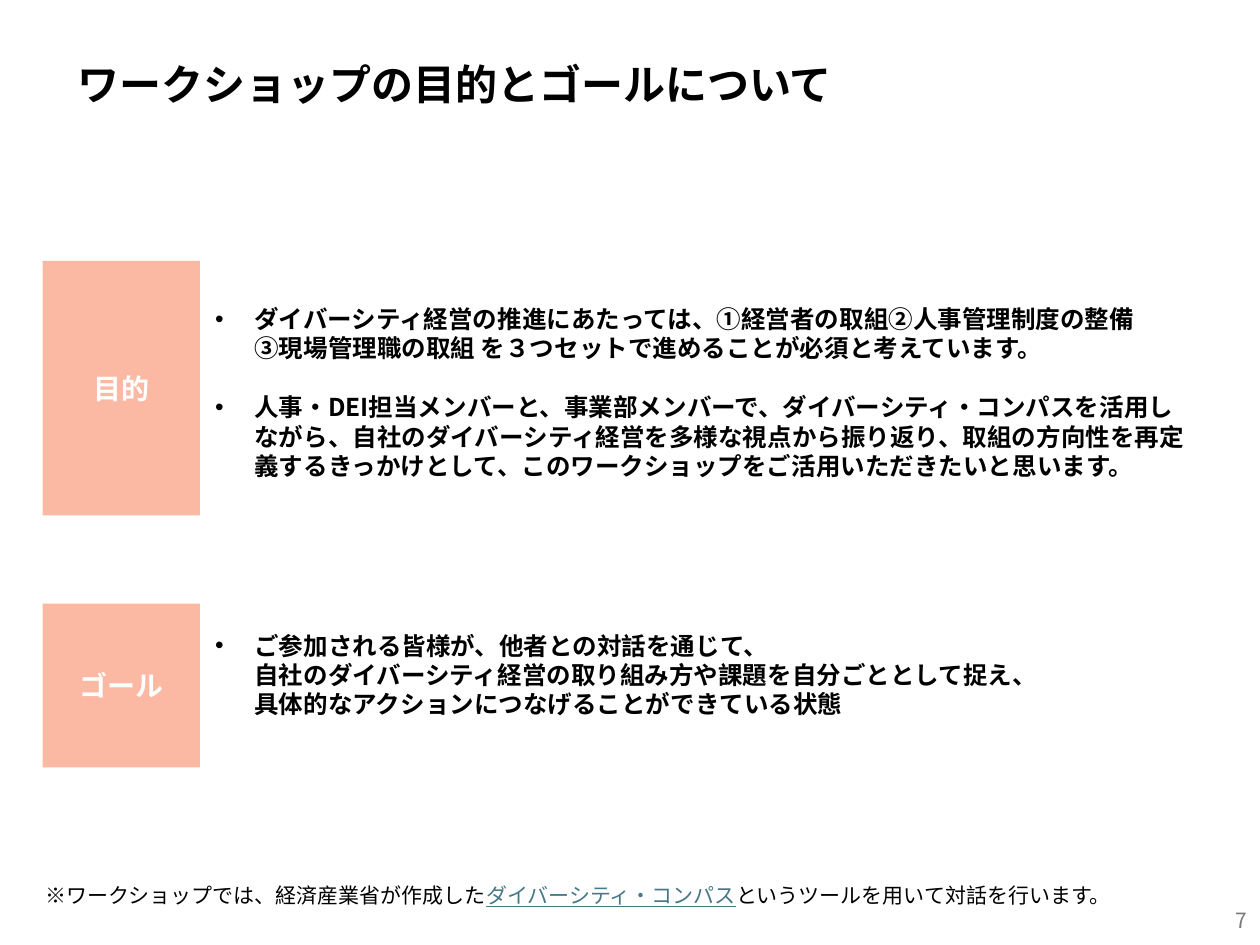
from lxml.etree import SubElement
from pptx import Presentation
from pptx.dml.color import RGBColor
from pptx.enum.shapes import MSO_SHAPE as Shape
from pptx.enum.text import MSO_ANCHOR as Anchor, PP_ALIGN as Align
from pptx.oxml.ns import qn
from pptx.util import Cm, Pt

FONT = "Noto Sans CJK JP"
BLACK = RGBColor(0x00, 0x00, 0x00)
WHITE = RGBColor(0xFF, 0xFF, 0xFF)
SALMON = RGBColor(0xFB, 0xB9, 0xA4)
LINK_TEAL = RGBColor(0x46, 0x78, 0x86)
GRAY = RGBColor(0x79, 0x79, 0x79)

MARGIN = 0.86
LABEL_WIDTH = 3.17
BODY_LEFT = 4.09
BODY_WIDTH = 20.27
HANGING = 0.79
LINE_PITCH = Pt(16.8)

# label, label top and height, body top and height, bullets as lists of lines
SECTIONS = [
    ("目的", 5.26, 5.13, 5.38, 5.05, [
        ["ダイバーシティ経営の推進にあたっては、①経営者の取組②人事管理制度の整備",
         "③現場管理職の取組 を３つセットで進めることが必須と考えています。"],
        ["人事・DEI担当メンバーと、事業部メンバーで、ダイバーシティ・コンパスを活用し"
         "ながら、自社のダイバーシティ経営を多様な視点から振り返り、取組の方向性を再定"
         "義するきっかけとして、このワークショップをご活用いただきたいと思います。"],
    ]),
    ("ゴール", 12.17, 3.3, 12.57, 2.06, [
        ["ご参加される皆様が、他者との対話を通じて、",
         "自社のダイバーシティ経営の取り組み方や課題を自分ごととして捉え、",
         "具体的なアクションにつなげることができている状態"],
    ]),
]


def add_span(para, text, size, color, bold=False, underline=False):
    span = para.add_run()
    span.text = text
    font = span.font
    font.name, font.size = FONT, Pt(size)
    font.bold, font.underline = bold, underline
    font.color.rgb = color
    SubElement(span._r.get_or_add_rPr(), qn("a:ea"), typeface=FONT)


def add_text_frame(page, left, top, width, height, anchor):
    box = page.shapes.add_textbox(Cm(left), Cm(top), Cm(width), Cm(height))
    frame = box.text_frame
    frame.word_wrap = True
    frame.vertical_anchor = anchor
    return frame


def set_bullet(para):
    """Give the paragraph a round bullet with a hanging indent."""
    props = para._p.get_or_add_pPr()
    props.set("marL", str(Cm(HANGING)))
    props.set("indent", str(-Cm(HANGING)))
    SubElement(props, qn("a:buFont"), typeface="Arial")
    SubElement(props, qn("a:buChar"), char="•")


def place_title(page, left, top, width, height):
    title = page.shapes.title
    title.left, title.top = Cm(left), Cm(top)
    title.width, title.height = Cm(width), Cm(height)
    title.text_frame.vertical_anchor = Anchor.MIDDLE
    para = title.text_frame.paragraphs[0]
    para.alignment = Align.LEFT
    para.line_spacing = 0.9
    add_span(para, "ワークショップの目的とゴールについて", 24, BLACK, bold=True)


def add_label(page, text, left, top, width, height):
    label = page.shapes.add_shape(
        Shape.RECTANGLE, Cm(left), Cm(top), Cm(width), Cm(height))
    label.shadow.inherit = False
    label.fill.solid()
    label.fill.fore_color.rgb = SALMON
    label.line.fill.background()
    label.text_frame.vertical_anchor = Anchor.MIDDLE
    para = label.text_frame.paragraphs[0]
    para.alignment = Align.CENTER
    add_span(para, text, 16, WHITE, bold=True)


def add_bullets(page, bullets, left, top, width, height):
    frame = add_text_frame(page, left, top, width, height, Anchor.MIDDLE)
    for index, lines in enumerate(bullets):
        para = frame.add_paragraph() if index else frame.paragraphs[0]
        set_bullet(para)
        para.line_spacing = LINE_PITCH
        if index:
            para.space_before = LINE_PITCH
        for number, line in enumerate(lines):
            if number:
                para.add_line_break()
            add_span(para, line, 14, BLACK, bold=True)


def add_footnote(page, left, top, width, height):
    frame = add_text_frame(page, left, top, width, height, Anchor.TOP)
    para = frame.paragraphs[0]
    para.line_spacing = LINE_PITCH
    add_span(para, "※ワークショップでは、経済産業省が作成した", 12, BLACK)
    add_span(para, "ダイバーシティ・コンパス", 12, LINK_TEAL, underline=True)
    add_span(para, "というツールを用いて対話を行います。", 12, BLACK)


def add_page_number(page, left, top, width, height):
    frame = add_text_frame(page, left, top, width, height, Anchor.MIDDLE)
    para = frame.paragraphs[0]
    para.alignment = Align.RIGHT
    add_span(para, "7", 12, GRAY)


def main():
    deck = Presentation()
    deck.slide_width, deck.slide_height = Cm(25.4), Cm(19.05)
    page = deck.slides.add_slide(deck.slide_layouts.get_by_name("Title Only"))
    place_title(page, 1.3, 0.36, 21.9, 2.77)
    for name, top, height, body_top, body_height, bullets in SECTIONS:
        add_label(page, name, MARGIN, top, LABEL_WIDTH, height)
        add_bullets(page, bullets, BODY_LEFT, body_top, BODY_WIDTH, body_height)
    add_footnote(page, 0.66, 17.58, 24.26, 0.79)
    add_page_number(page, 19.69, 18.03, 5.71, 1.02)
    deck.save("out.pptx")


if __name__ == "__main__":
    main()
